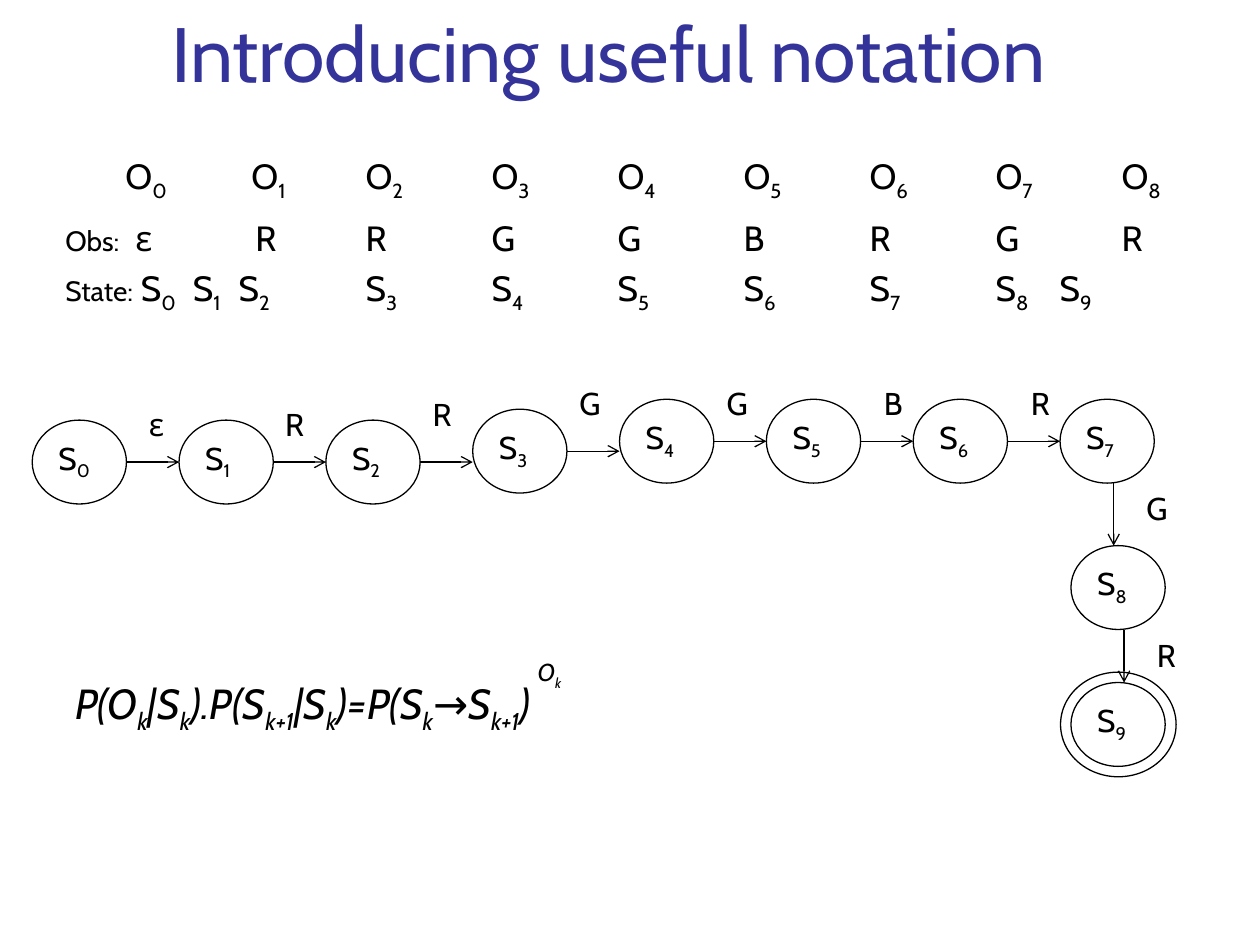
"""Build a slide that introduces notation for a chain of states and outputs."""
from dataclasses import dataclass

from pptx import Presentation
from pptx import util as u
from pptx.dml import color
from pptx.enum import shapes, text
from pptx.oxml import xmlchemy
from pptx.oxml import ns

FONT, BLACK, WHITE, BLUE = "Cabin", "000000", "FFFFFF", "333399"
WIDE, HIGH = 1.9, 1.69
LEFT, STEP, PITCH = 0.65, 2.96, 2.54


@dataclass
class Node:
    name: str
    x: float
    y: float


@dataclass
class Label:
    words: str
    x: float
    y: float


@dataclass
class Row:
    lead: str
    words: str
    gap: int
    heads: list[float]
    tails: list[float]


CHAIN = [Node(f"S~{i}~", LEFT + STEP * i, y)
         for i, y in enumerate([8.47, 8.47, 8.47, 8.25, 8.05, 8.05, 8.05, 8.05])]
DROP = [Node("S~8~", 21.59, 11), Node("S~9~", 21.59, 13.76)]
LABELS = [
    Label("ε", 2.75, 8.05), Label("R", 5.5, 8.05), Label("R", 8.47, 7.83),
    Label("G", 11.43, 7.62), Label("G", 14.4, 7.62), Label("B", 17.57, 7.62),
    Label("R", 20.53, 7.62), Label("G", 22.86, 9.74), Label("R", 23.07, 12.7),
]
COLUMNS = [6.05 + PITCH * i for i in range(7)]
ROWS = [
    Row("", "".join(f"\tO~{i}~" for i in range(9)), 0, [1.21, 3.75], COLUMNS),
    Row("Obs:", "\tε\tR\tR\tG\tG\tB\tR\tG\tR", 8, [1.41, 3.83], COLUMNS),
    Row("State:", "".join(f"\tS~{i}~" for i in range(10)), 5,
        [1.52, 2.57, 3.49], COLUMNS[:6] + [20.04]),
]


def tint(code: str) -> color.RGBColor:
    return color.RGBColor.from_string(code)


def child(parent: xmlchemy.BaseOxmlElement, tag: str, **attrs: str):
    part = parent.makeelement(ns.qn(tag), attrs)
    parent.append(part)
    return part


def write(par, words: str, size: int, code: str = BLACK, slant: bool = False) -> None:
    font = par.font
    font.name, font.size, font.italic = FONT, u.Pt(size), slant
    font.color.rgb = tint(code)
    for i, piece in enumerate(words.split("~")):
        if piece:
            run = par.add_run()
            run.text = piece
            if i % 2:
                run._r.get_or_add_rPr().set("baseline", "-25000")


def add_box(slide, x: float, y: float, wide: float, high: float):
    frame = slide.shapes.add_textbox(u.Cm(x), u.Cm(y), u.Cm(wide), u.Cm(high)).text_frame
    frame.word_wrap = True
    return frame


def add_oval(slide, x: float, y: float, wide: float, high: float):
    oval = slide.shapes.add_shape(
        shapes.MSO_SHAPE.OVAL, u.Cm(x), u.Cm(y), u.Cm(wide), u.Cm(high))
    oval.shadow.inherit = False
    oval.fill.solid()
    oval.fill.fore_color.rgb = tint(WHITE)
    oval.line.color.rgb = tint(BLACK)
    oval.line.width = u.Pt(0.75)
    return oval


def add_node(slide, node: Node) -> None:
    frame = add_oval(slide, node.x, node.y, WIDE, HIGH).text_frame
    frame.vertical_anchor = text.MSO_ANCHOR.TOP
    par = frame.paragraphs[0]
    par.alignment = text.PP_ALIGN.LEFT
    write(par, node.name, 18)


def add_arrow(slide, x: float, y: float, x_end: float, y_end: float) -> None:
    arrow = slide.shapes.add_connector(
        shapes.MSO_CONNECTOR.STRAIGHT, u.Cm(x), u.Cm(y), u.Cm(x_end), u.Cm(y_end))
    arrow.line.color.rgb = tint(BLACK)
    arrow.line.width = u.Pt(0.75)
    child(arrow.line._get_or_add_ln(), "a:tailEnd", type="arrow")
    child(arrow._element.spPr, "a:effectLst")


def add_row(par, row: Row) -> None:
    if row.lead:
        lead = par.add_run()
        lead.text = row.lead
        lead.font.size = u.Pt(16)
    write(par, row.words, 20)
    par.space_before = u.Pt(row.gap)
    props = par._p.get_or_add_pPr()
    tabs = props.makeelement(ns.qn("a:tabLst"))
    for stop in row.heads + row.tails:
        child(tabs, "a:tab", pos=str(int(u.Cm(stop))), algn="l")
    props.insert_element_before(tabs, "a:defRPr")


def main() -> None:
    deck = Presentation()
    deck.slide_width, deck.slide_height = u.Cm(25.4), u.Cm(19.05)
    slide = deck.slides.add_slide(deck.slide_layouts[6])

    title = add_box(slide, 3.2, 0.58, 21.64, 1.52)
    title.vertical_anchor = text.MSO_ANCHOR.BOTTOM
    write(title.paragraphs[0], "Introducing useful notation", 44, BLUE)

    add_oval(slide, 21.38, 13.55, 2.33, 2.11)
    for start, end in zip(CHAIN, CHAIN[1:]):
        mid = start.y + HIGH / 2
        add_arrow(slide, start.x + WIDE, mid, end.x, mid)
    for start, end, x in zip([CHAIN[-1], DROP[0]], DROP, [22.45, 22.66]):
        add_arrow(slide, x, start.y + HIGH, x, end.y)
    for node in CHAIN + DROP:
        add_node(slide, node)

    table = add_box(slide, 1.07, 2.54, 23.19, 3.81)
    table.margin_top = u.Cm(0.57)
    for i, row in enumerate(ROWS):
        add_row(table.add_paragraph() if i else table.paragraphs[0], row)

    for label in LABELS:
        frame = add_box(slide, label.x, label.y, 0.81, 1.02)
        write(frame.paragraphs[0], label.words, 18)

    rule = add_box(slide, 1.27, 12.5, 12.42, 2.31)
    rule.margin_top = u.Cm(1.16)
    write(rule.paragraphs[0],
          "P(O~k~|S~k~).P(S~k+1~|S~k~)=P(S~k~→S~k+1~)", 24, slant=True)
    power = add_box(slide, 10.59, 13.13, 1.04, 0.86)
    power.word_wrap = False
    write(power.paragraphs[0], "O~k~", 14, slant=True)

    deck.save("out.pptx")


if __name__ == "__main__":
    main()
